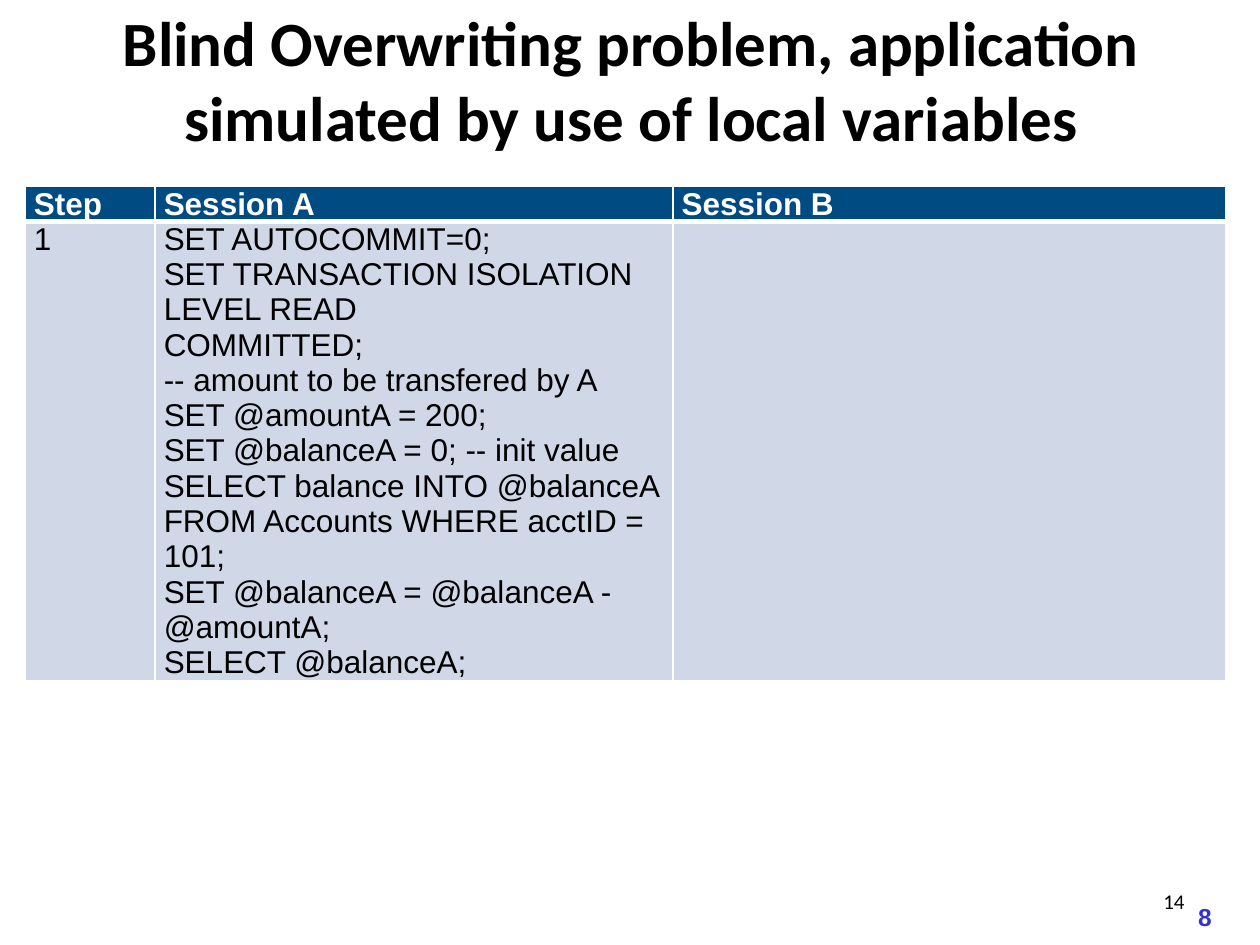
from lxml import etree
from pptx import Presentation
from pptx.dml.color import RGBColor
from pptx.enum.text import MSO_ANCHOR, MSO_AUTO_SIZE, PP_ALIGN
from pptx.oxml.ns import qn
from pptx.util import Inches, Pt

LEFT, CENTER, RIGHT, JUSTIFY = PP_ALIGN.LEFT, PP_ALIGN.CENTER, PP_ALIGN.RIGHT, PP_ALIGN.JUSTIFY
TOP, MIDDLE = MSO_ANCHOR.TOP, MSO_ANCHOR.MIDDLE
NO_FIT = MSO_AUTO_SIZE.NONE

# Content
TITLE = "Blind Overwriting problem, application simulated by use of local variables"
HEADERS = ["Step", "Session A", "Session B"]
STEP = ["1"]
SESSION_A = [
    "SET AUTOCOMMIT=0;",
    "SET TRANSACTION ISOLATION LEVEL READ",
    "COMMITTED;",
    "-- amount to be transfered by A",
    "SET @amountA = 200;",
    "SET @balanceA = 0; -- init value",
    "SELECT balance INTO @balanceA",
    "FROM Accounts WHERE acctID = 101;",
    "SET @balanceA = @balanceA - @amountA;",
    "SELECT @balanceA;",
]
ROWS = [[[h] for h in HEADERS], [STEP, SESSION_A, []]]
COL_WIDTHS = [1.03, 4.11, 4.39]
ROW_HEIGHTS = [0.28, 3.62]

# Theme
THEME = {
    "title": {"name": "Calibri", "size": 36, "bold": True, "color": "000000"},
    "header": {"name": "Arial", "size": 18, "bold": True, "color": "FFFFFF"},
    "body": {"name": "Arial", "size": 18, "bold": False, "color": "000000"},
    "number": {"name": "Calibri", "size": 12, "bold": False, "color": "000000"},
    "page": {"name": "Arial", "size": 14, "bold": True, "color": "3333CC"},
    "header_fill": "004B82",
    "body_fill": "D0D8E8",
    "border": "FFFFFF",
}


def write(tf, lines, style, align=LEFT):
    for i, line in enumerate(lines):
        p = tf.paragraphs[0] if i == 0 else tf.add_paragraph()
        p.alignment = align
        r = p.add_run()
        r.text = line
        for key, value in THEME[style].items():
            if key == "color":
                r.font.color.rgb = RGBColor.from_string(value)
            else:
                setattr(r.font, key, Pt(value) if key == "size" else value)


def place(sp, left, top, width, height):
    sp.left, sp.top, sp.width, sp.height = map(Inches, (left, top, width, height))


def set_borders(cell, bottom):
    tcPr = cell._tc.get_or_add_tcPr()
    for i, (side, points) in enumerate({"L": 1, "R": 1, "T": 1, "B": bottom}.items()):
        ln = etree.Element(qn(f"a:ln{side}"), w=str(Pt(points)))
        fill = etree.SubElement(ln, qn("a:solidFill"))
        etree.SubElement(fill, qn("a:srgbClr"), val=THEME["border"])
        tcPr.insert(i, ln)


def add_label(s, box, text, style, align, anchor, wrap):
    tf = s.shapes.add_textbox(*map(Inches, box)).text_frame
    tf.word_wrap, tf.vertical_anchor = wrap, anchor
    write(tf, [text], style, align)


def add_sessions(s, left, top):
    frame = s.shapes.add_table(len(ROWS), len(HEADERS), Inches(left), Inches(top),
                               Inches(sum(COL_WIDTHS)), Inches(sum(ROW_HEIGHTS)))
    table = frame.table
    for col, width in zip(table.columns, COL_WIDTHS):
        col.width = Inches(width)
    for i, (row, height) in enumerate(zip(ROWS, ROW_HEIGHTS)):
        table.rows[i].height = Inches(height)
        style, bottom = ("header", 3) if i == 0 else ("body", 1)
        for j, lines in enumerate(row):
            cell = table.cell(i, j)
            cell.margin_left = cell.margin_right = Inches(0.07)
            cell.margin_top = cell.margin_bottom = 0
            cell.fill.solid()
            cell.fill.fore_color.rgb = RGBColor.from_string(THEME[style + "_fill"])
            set_borders(cell, bottom)
            write(cell.text_frame, lines, style)
    # The step number and the last statement are justified
    table.cell(1, 0).text_frame.paragraphs[0].alignment = JUSTIFY
    table.cell(1, 1).text_frame.paragraphs[-1].alignment = JUSTIFY


def main():
    prs = Presentation()
    prs.slide_width, prs.slide_height = Inches(10), Inches(7.5)
    s = prs.slides.add_slide(prs.slide_layouts[5])

    # Title
    title = s.shapes.title
    place(title, 0.51, 0.13, 9, 0.99)
    tf = title.text_frame
    tf.word_wrap, tf.auto_size, tf.vertical_anchor = True, NO_FIT, MIDDLE
    write(tf, [TITLE], "title", CENTER)

    # Session table
    add_sessions(s, 0.2, 1.48)

    # Page numbers
    add_label(s, (9.41, 7.11, 0.31, 0.34), "8", "page", LEFT, TOP, False)
    add_label(s, (7.17, 6.95, 2.33, 0.4), "14", "number", RIGHT, MIDDLE, True)

    prs.save("out.pptx")


if __name__ == "__main__":
    main()
